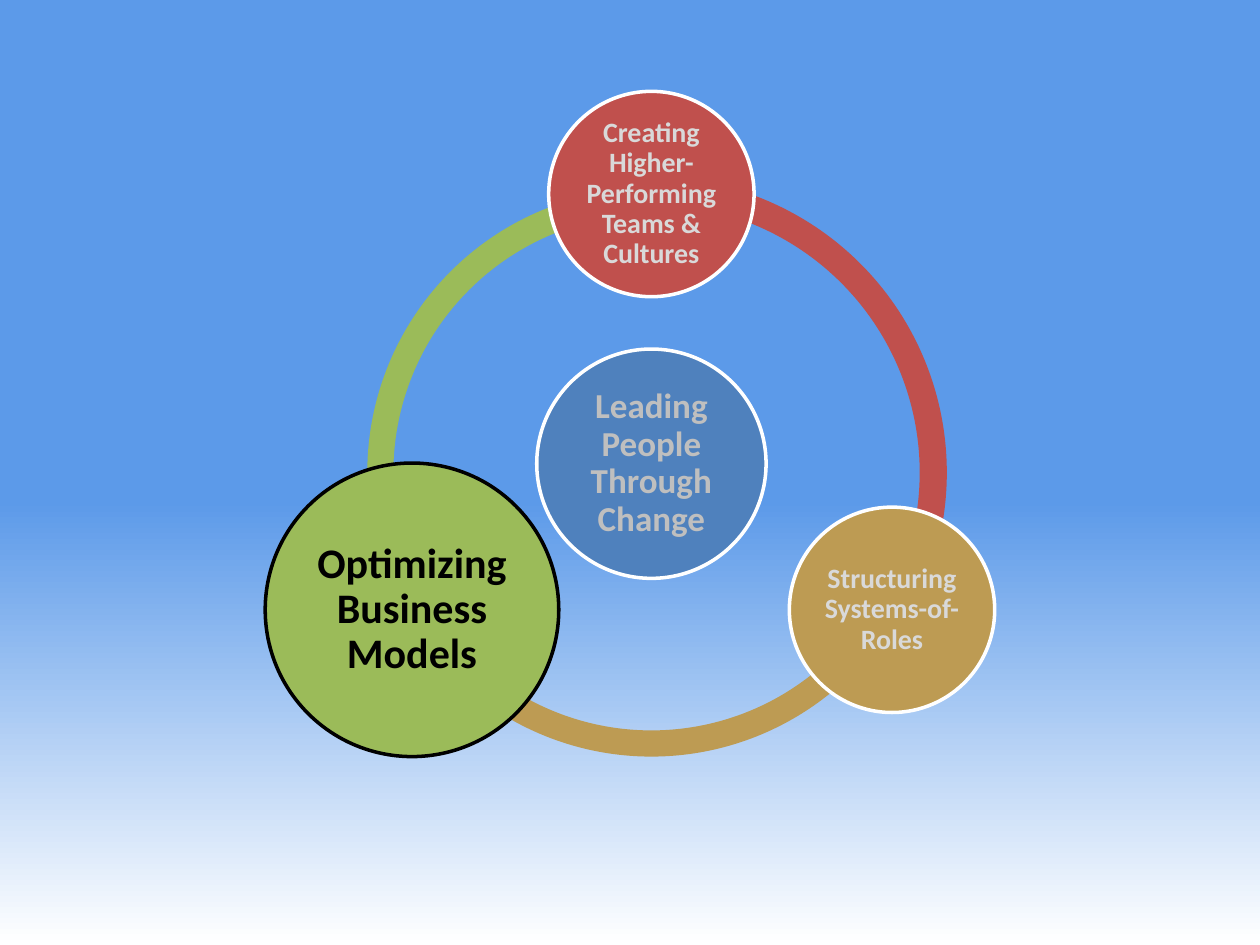
from dataclasses import dataclass

from pptx import Presentation
from pptx.dml.color import RGBColor
from pptx.enum.shapes import MSO_SHAPE as Shape
from pptx.enum.text import MSO_ANCHOR as Anchor, PP_ALIGN as Align
from pptx.util import Inches, Pt


@dataclass(frozen=True)
class Theme:
    font: str = "Calibri"
    sky: str = "5C9AE9"
    white: str = "FFFFFF"
    black: str = "000000"
    blue: str = "4F81BD"
    red: str = "C0504D"
    gold: str = "BD9B53"
    green: str = "9BBB59"
    center_text: str = "BFBFBF"
    muted_text: str = "D9D9D9"
    small: int = 16
    medium: int = 20
    large: int = 24
    outline: int = 2


THEME = Theme()
RING_CENTER = (3.07, 3.03)
ARCS = [
    (4.51, 90, 162, THEME.green),
    (4.51, 18, 90, THEME.gold),
    (4.69, 162, 18, THEME.red),
]
CIRCLES = [
    ("Leading People Through Change", 3.07, 2.96, 1.82,
     THEME.blue, THEME.white, THEME.center_text, THEME.medium),
    ("Creating Higher-Performing Teams & Cultures", 3.07, 0.82, 1.63,
     THEME.red, THEME.white, THEME.muted_text, THEME.small),
    ("Structuring Systems-of-Roles", 4.98, 4.12, 1.63,
     THEME.gold, THEME.white, THEME.muted_text, THEME.small),
    ("Optimizing Business Models", 1.17, 4.12, 2.33,
     THEME.green, THEME.black, THEME.black, THEME.large),
]


def color(value):
    return RGBColor.from_string(value)


def set_all(target, values):
    for name, value in values.items():
        setattr(target, name, value)


def paint_background(page):
    fill = page.background.fill
    fill.gradient()
    fill.gradient_angle = 270
    for stop, position, tone in zip(fill.gradient_stops, (0.53, 1), (THEME.sky, THEME.white)):
        stop.position = position
        stop.color.rgb = color(tone)


def add_centered(page, kind, x, y, size, tone):
    shape = page.shapes.add_shape(
        kind, Inches(x - size / 2), Inches(y - size / 2), Inches(size), Inches(size))
    shape.shadow.inherit = False
    shape.fill.solid()
    shape.fill.fore_color.rgb = color(tone)
    return shape


def add_ring(page, left, top):
    x, y = RING_CENTER
    for size, start, end, tone in ARCS:
        arc = add_centered(page, Shape.BLOCK_ARC, left + x, top + y, size, tone)
        arc.line.fill.background()
        for index, value in enumerate((start, end, 0.046)):
            arc.adjustments[index] = value


def add_circle(page, left, top, text, x, y, size, tone, outline, text_color, text_size):
    circle = add_centered(page, Shape.OVAL, left + x, top + y, size, tone)
    circle.line.color.rgb = color(outline)
    circle.line.width = Pt(THEME.outline)
    frame = circle.text_frame
    inset = Inches(0.03 if text_size > THEME.small else 0.02)
    set_all(frame, {
        "word_wrap": True, "vertical_anchor": Anchor.MIDDLE,
        "margin_left": inset, "margin_right": inset,
        "margin_top": inset, "margin_bottom": inset,
    })
    para = frame.paragraphs[0]
    set_all(para, {"alignment": Align.CENTER, "line_spacing": 0.9})
    span = para.add_run()
    span.text = text
    set_all(span.font, {"name": THEME.font, "size": Pt(text_size), "bold": True})
    span.font.color.rgb = color(text_color)


def add_cycle(page, left, top):
    add_ring(page, left, top)
    for circle in CIRCLES:
        add_circle(page, left, top, *circle)


def main():
    deck = Presentation()
    set_all(deck, {"slide_width": Inches(10), "slide_height": Inches(7.5)})
    page = deck.slides.add_slide(deck.slide_layouts[6])
    paint_background(page)
    add_cycle(page, 2.1, 0.72)
    deck.save("out.pptx")


if __name__ == "__main__":
    main()
